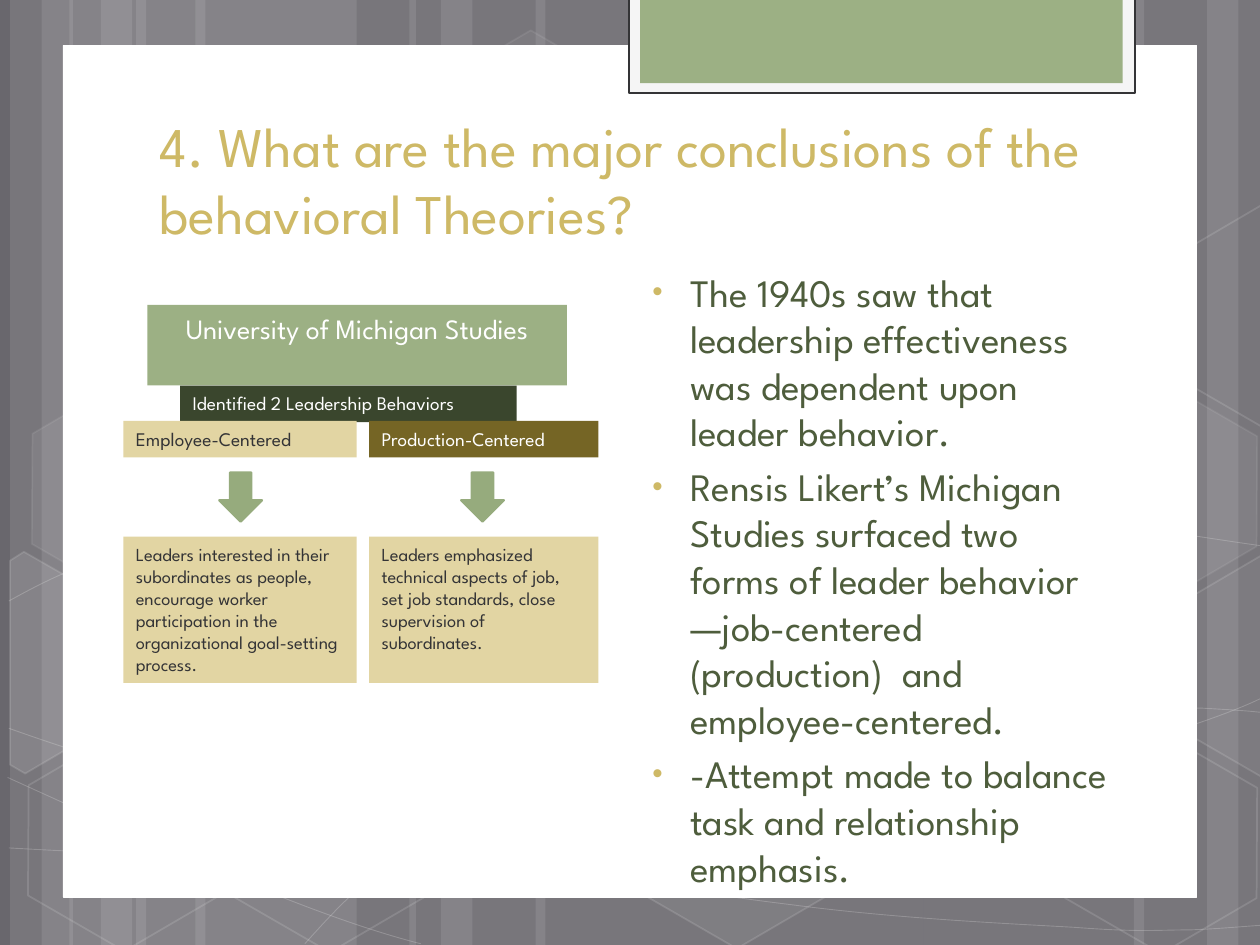
from dataclasses import dataclass
from lxml.etree import SubElement
from pptx import Presentation
from pptx.dml.color import RGBColor
from pptx.enum.shapes import MSO_SHAPE as Kind
from pptx.enum.text import MSO_ANCHOR as Anchor, PP_ALIGN as Align
from pptx.oxml.ns import qn
from pptx.util import Inches, Pt

FONT = "League Spartan"
WHITE, GREEN, GOLD = "FFFFFF", "9CB084", "CEB966"
SAND, DARK, LEAF = "E2D5A3", "343436", "96AB7D"
Point = tuple[float, float]


@dataclass
class Look:
    fill: str = ""
    alpha: int = 100
    line: str = ""
    width: float = 1
    fade: int = 100


@dataclass
class Card:
    left: float
    top: float
    width: float
    height: float
    fill: str
    text: str
    size: float
    hue: str
    align: Align = Align.LEFT


@dataclass
class Hex:
    left: float
    top: float
    alpha: int
    fade: int


def color(fill, hue: str) -> None:
    fill.solid()
    fill.fore_color.rgb = RGBColor.from_string(hue)


def fade(node, alpha: int) -> None:
    if alpha < 100:
        tone = node.find(f"{qn('a:solidFill')}/{qn('a:srgbClr')}")
        SubElement(tone, qn("a:alpha"), val=str(alpha * 1000))


def dress(shape, look: Look) -> None:
    shape.shadow.inherit = False
    props = shape._element.spPr
    if look.fill:
        color(shape.fill, look.fill)
        fade(props, look.alpha)
    else:
        shape.fill.background()
    if look.line:
        color(shape.line.fill, look.line)
        shape.line.width = Pt(look.width)
        fade(props.find(qn("a:ln")), look.fade)
    else:
        shape.line.fill.background()


def block(slide, kind: Kind, left: float, top: float, width: float, height: float, look: Look):
    shape = slide.shapes.add_shape(kind, Inches(left), Inches(top), Inches(width), Inches(height))
    dress(shape, look)
    return shape


def trace(slide, points: list[Point], look: Look, close: bool):
    dots = [(Inches(x), Inches(y)) for x, y in points]
    pen = slide.shapes.build_freeform(*dots[0])
    pen.add_line_segments(dots[1:], close=close)
    shape = pen.convert_to_shape()
    dress(shape, look)
    return shape


def bend(shape) -> None:
    track = next(shape._element.iter(qn("a:path")))
    lines = track.findall(qn("a:lnTo"))
    for i in range(0, len(lines), 3):
        curve = SubElement(track, qn("a:cubicBezTo"))
        for line in lines[i:i + 3]:
            curve.append(line[0])
            track.remove(line)


def style(para, size: float, hue: str) -> None:
    for run in para.runs:
        run.font.name = FONT
        run.font.size = Pt(size)
        color(run.font.fill, hue)


def dot(para) -> None:
    props = para._p.get_or_add_pPr()
    props.set("marL", str(Inches(0.38)))
    props.set("indent", str(Inches(-0.3)))
    SubElement(SubElement(props, qn("a:buClr")), qn("a:srgbClr"), val=GOLD)
    SubElement(props, qn("a:buSzPct"), val="76000")
    SubElement(props, qn("a:buFont"), typeface="Arial")
    SubElement(props, qn("a:buChar"), char="•")


def draw_card(slide, card: Card) -> None:
    shape = block(slide, Kind.RECTANGLE, card.left, card.top, card.width, card.height, Look(card.fill))
    frame = shape.text_frame
    frame.word_wrap = True
    frame.vertical_anchor = Anchor.TOP
    frame.text = card.text
    frame.paragraphs[0].alignment = card.align
    style(frame.paragraphs[0], card.size, card.hue)


def draw_hex(slide, item: Hex) -> None:
    look = Look(WHITE if item.alpha else "", item.alpha, WHITE, 1, item.fade)
    shape = block(slide, Kind.HEXAGON, item.left, item.top, 1.75, 1.52, look)
    shape.adjustments[0] = 0.285
    shape.rotation = 30


def add_text(slide, left: float, top: float, width: float, height: float, text: str):
    frame = slide.shapes.add_textbox(Inches(left), Inches(top), Inches(width), Inches(height)).text_frame
    frame.word_wrap = True
    frame.text = text
    return frame


BANDS = [(1.08, 1.75), (0.08, 0.5), (0.33, 0.83), (1.55, 1.75), (0.55, 0.5), (0.8, 0.83),
         (7.33, 1.75), (9.58, 0.5), (9, 0.83), (4.25, 3.08), (3.25, 0.5), (3.5, 0.83)]
CURVES = [
    [(0.07, 6.73), (0.61, 6.76), (1.15, 6.79), (1.9, 6.78), (2.65, 6.77), (3.58, 6.75), (4.58, 6.65),
     (5.58, 6.55), (7, 6.36), (7.92, 6.17), (8.83, 5.98), (9.77, 5.68), (10.07, 5.51)],
    [(0.07, 4.77), (0.36, 4.61), (0.65, 4.46), (1.21, 4.31), (1.78, 4.16), (2.59, 3.94), (3.47, 3.87),
     (4.36, 3.8), (5.44, 3.79), (6.54, 3.87), (7.64, 3.95), (9.47, 4.26), (10.07, 4.34)],
    [(0.06, 6.17), (1.27, 6.72), (2.47, 7.27), (3.34, 7.49)],
    [(0.07, 5.78), (0.38, 5.89), (0.7, 6), (1.28, 6.16), (1.86, 6.31), (2.73, 6.56), (3.57, 6.73),
     (4.4, 6.9), (5.45, 7.08), (6.28, 7.18), (7.11, 7.29), (8, 7.33), (8.53, 7.36),
     (9.05, 7.4), (9.19, 7.38), (9.45, 7.38), (9.71, 7.37), (9.89, 7.35), (10.07, 7.34)],
    [(2.42, 7.49), (2.6, 7.29), (2.78, 7.09), (3.02, 6.91), (3.26, 6.73), (3.6, 6.53), (3.88, 6.39),
     (4.16, 6.25), (4.33, 6.19), (4.7, 6.09), (5.06, 5.99), (5.73, 5.85), (6.08, 5.78),
     (6.44, 5.71), (6.49, 5.71), (6.8, 5.69), (7.11, 5.66), (7.6, 5.63), (7.94, 5.62),
     (8.29, 5.61), (8.86, 5.62), (8.86, 5.62), (9.08, 5.62), (9.31, 5.62), (9.53, 5.62),
     (9.71, 5.63), (9.88, 5.64), (9.97, 5.65), (10.06, 5.66), (10.03, 5.65), (10.06, 5.66)],
]
HEXES = [Hex(3.34, 0.36, 4, 8), Hex(4.97, 5.89, 6, 12), Hex(0.11, 5.91, 0, 12), Hex(0.14, 3.12, 7, 8),
         Hex(1.74, 5.92, 0, 12), Hex(8.34, 5.93, 0, 12), Hex(8.34, 3.14, 7, 8)]
PARTS = [
    ([(0.08, 4.45), (0.19, 4.38), (0.96, 4.82), (0.95, 5.7), (0.2, 6.14), (0.08, 6.07)], 10),
    ([(9.26, 4.85), (10.01, 4.41), (10.09, 4.46), (10.09, 6.13), (10.02, 6.17), (9.26, 5.73)], 4),
    ([(9.26, 2.07), (10.01, 1.63), (10.1, 1.68), (10.09, 3.35), (10.02, 3.39), (9.26, 2.95)], 0),
]
CARDS = [
    Card(1.17, 2.42, 3.33, 0.64, GREEN, "University of Michigan Studies", 16, WHITE, Align.CENTER),
    Card(1.43, 3.06, 2.67, 0.29, "3A462D", "Identified 2 Leadership Behaviors", 11, WHITE),
    Card(0.98, 3.34, 1.85, 0.29, SAND, "Employee-Centered", 11, DARK),
    Card(2.93, 3.34, 1.82, 0.29, "756525", "Production-Centered", 11, WHITE),
    Card(0.98, 4.26, 1.85, 1.16, SAND, "Leaders interested in their subordinates as people, encourage worker "
         "participation in the organizational goal-setting process.", 10.5, DARK),
    Card(2.93, 4.26, 1.82, 1.16, SAND, "Leaders emphasized technical aspects of job, set job standards, "
         "close supervision of subordinates.", 10.5, DARK),
]
POINTS = [
    "The 1940s saw that leadership effectiveness was dependent upon leader behavior.",
    "Rensis Likert’s Michigan Studies surfaced two forms of leader behavior—job-centered "
    "(production)  and employee-centered.",
    "-Attempt made to balance task and relationship emphasis.",
]


def main() -> None:
    deck = Presentation()
    deck.slide_width, deck.slide_height = Inches(10), Inches(7.5)
    slide = deck.slides.add_slide(deck.slide_layouts[6])
    color(slide.background.fill, "69676D")
    for left, width in BANDS:
        block(slide, Kind.RECTANGLE, left, 0, width, 7.5, Look(WHITE, 10))
    for knots in CURVES:
        bend(trace(slide, knots, Look(line=WHITE, width=0.5, fade=20), False))
    for item in HEXES:
        draw_hex(slide, item)
    for points, alpha in PARTS:
        trace(slide, points, Look(WHITE if alpha else "", alpha, WHITE, 1, 12), True)
    block(slide, Kind.RECTANGLE, 0.5, 0.36, 9, 6.76, Look(WHITE, line=WHITE, width=0.5))
    block(slide, Kind.RECTANGLE, 4.99, -0.02, 4.02, 0.76, Look("F5F5F5", line=DARK, width=1.25))
    block(slide, Kind.RECTANGLE, 5.08, -0.02, 3.83, 0.68, Look(GREEN))
    title = add_text(slide, 1.17, 0.75, 7.68, 1.25,
                     "4. What are the major conclusions of the behavioral Theories?")
    title.vertical_anchor = Anchor.BOTTOM
    style(title.paragraphs[0], 32, GOLD)
    body = add_text(slide, 5, 2.08, 3.91, 4.67, "\n".join(POINTS))
    for i, para in enumerate(body.paragraphs):
        dot(para)
        para.space_before = Pt(4.4 if i else 0)
        style(para, 22.2, "4E5D3C")
    for card in CARDS:
        draw_card(slide, card)
    for left in (3.66, 1.74):
        block(slide, Kind.DOWN_ARROW, left, 3.75, 0.34, 0.39, Look(LEAF, line=LEAF, width=1.25))
    deck.save("out.pptx")


if __name__ == "__main__":
    main()
